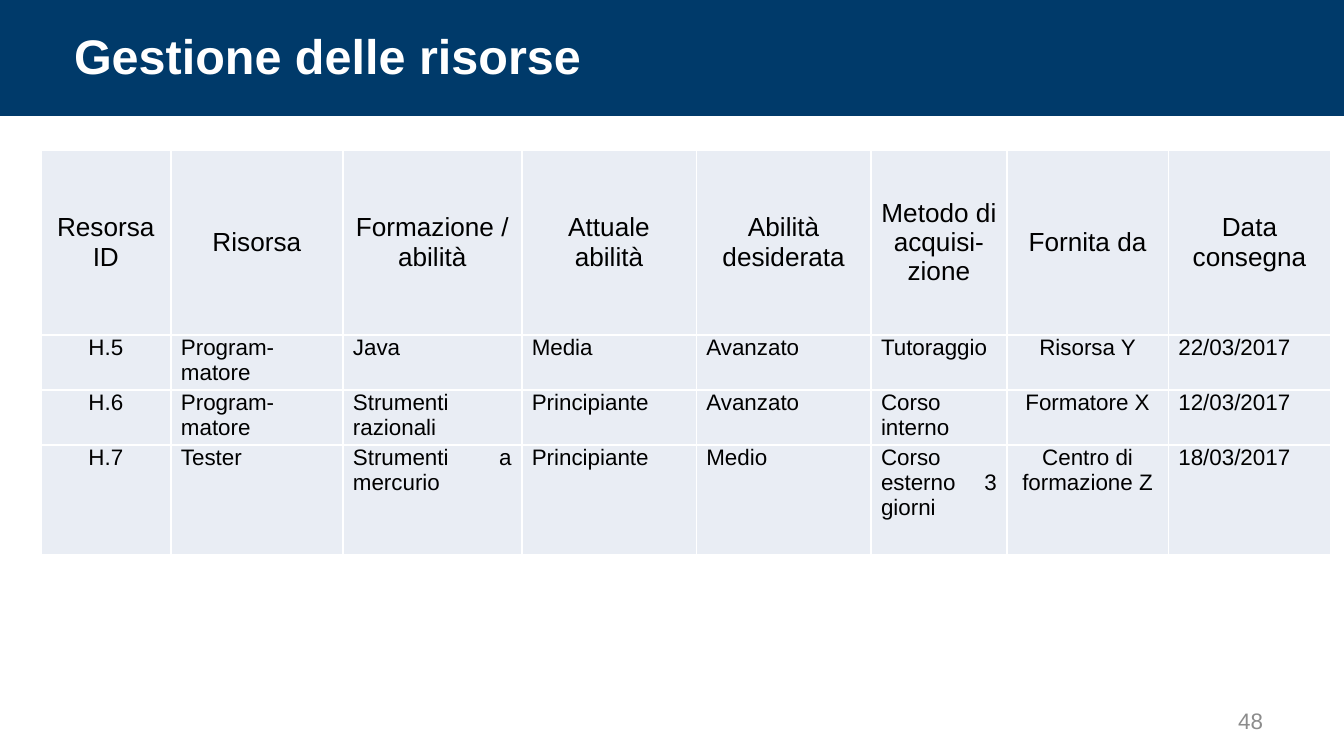
from typing import NamedTuple

from lxml import etree
from pptx import Presentation
from pptx.dml.color import RGBColor
from pptx.enum import shapes, text
from pptx.oxml import ns
from pptx.util import Cm, Pt

NAVY = RGBColor(0x00, 0x3A, 0x6A)
WHITE = RGBColor(0xFF, 0xFF, 0xFF)
BLACK = RGBColor(0x00, 0x00, 0x00)
GREY = RGBColor(0x8C, 0x8C, 0x8C)
PALE_BLUE = RGBColor(0xE9, 0xED, 0xF4)

LEFT, CENTER = text.PP_ALIGN.LEFT, text.PP_ALIGN.CENTER
RIGHT, JUSTIFY = text.PP_ALIGN.RIGHT, text.PP_ALIGN.JUSTIFY
TOP, MIDDLE = text.MSO_ANCHOR.TOP, text.MSO_ANCHOR.MIDDLE


class Column(NamedTuple):
    heading: str
    width: float
    align: text.PP_ALIGN
    entries: tuple[str, str, str]


COLUMNS = (
    Column("Resorsa ID", 2.46, CENTER, ("H.5", "H.6", "H.7")),
    Column("Risorsa", 3.25, JUSTIFY, ("Program-matore", "Program-matore", "Tester")),
    Column("Formazione /abilità", 3.38, JUSTIFY,
           ("Java", "Strumenti razionali", "Strumenti a mercurio")),
    Column("Attuale abilità", 3.3, JUSTIFY, ("Media", "Principiante", "Principiante")),
    Column("Abilità desiderata", 3.3, JUSTIFY, ("Avanzato", "Avanzato", "Medio")),
    Column("Metodo di acquisi-zione", 2.57, JUSTIFY,
           ("Tutoraggio", "Corso interno", "Corso esterno 3 giorni")),
    Column("Fornita da", 3.05, CENTER,
           ("Risorsa Y", "Formatore X", "Centro di formazione Z")),
    Column("Data consegna", 3.07, JUSTIFY, ("22/03/2017", "12/03/2017", "18/03/2017")),
)
ROW_HEIGHTS = (3.5, 1.04, 1.04, 2.08)


def write(frame, words: str, *, size: float, color: RGBColor = BLACK,
          bold: bool = False, align=LEFT, after: float = 0) -> None:
    """Fill a text frame with one formatted paragraph."""
    frame.word_wrap = True
    paragraph = frame.paragraphs[0]
    paragraph.alignment = align
    paragraph.space_after = Pt(after)
    run = paragraph.add_run()
    run.text = words
    run.font.name = "Arial"
    run.font.size = Pt(size)
    run.font.bold = bold
    run.font.color.rgb = color


def add_label(slide, left: float, top: float, width: float, height: float,
              words: str, **style) -> None:
    box = slide.shapes.add_textbox(Cm(left), Cm(top), Cm(width), Cm(height))
    frame = box.text_frame
    frame.margin_top = frame.margin_bottom = 0
    frame.vertical_anchor = MIDDLE
    write(frame, words, **style)


def add_borders(cell, color: RGBColor) -> None:
    """Draw a one-point line on each side of a cell."""
    properties = cell._tc.get_or_add_tcPr()
    for position, side in enumerate(("lnL", "lnR", "lnT", "lnB")):
        line = etree.Element(ns.qn(f"a:{side}"), w=str(Pt(1)))
        fill = etree.SubElement(line, ns.qn("a:solidFill"))
        etree.SubElement(fill, ns.qn("a:srgbClr"), val=str(color))
        properties.insert(position, line)


def fill_cell(cell, words: str, *, anchor=TOP, **style) -> None:
    cell.margin_left = cell.margin_right = Cm(0.19)
    cell.margin_top = cell.margin_bottom = 0
    cell.vertical_anchor = anchor
    cell.fill.solid()
    cell.fill.fore_color.rgb = PALE_BLUE
    add_borders(cell, WHITE)
    write(cell.text_frame, words, after=6, **style)


def add_resources(slide, columns: tuple[Column, ...]) -> None:
    total_width = sum(column.width for column in columns)
    frame = slide.shapes.add_table(len(ROW_HEIGHTS), len(columns), Cm(0.77), Cm(2.83),
                                   Cm(total_width), Cm(sum(ROW_HEIGHTS)))
    resources = frame.table
    for row, height in zip(resources.rows, ROW_HEIGHTS):
        row.height = Cm(height)
    for index, column in enumerate(columns):
        resources.columns[index].width = Cm(column.width)
        fill_cell(resources.cell(0, index), column.heading,
                  anchor=MIDDLE, size=14, align=CENTER)
        for row_index, entry in enumerate(column.entries, start=1):
            fill_cell(resources.cell(row_index, index), entry,
                      size=12, align=column.align)


def main() -> None:
    deck = Presentation()
    deck.slide_width, deck.slide_height = Cm(25.4), Cm(14.29)
    slide = deck.slides.add_slide(deck.slide_layouts[6])

    # Title band
    band = slide.shapes.add_shape(shapes.MSO_SHAPE.RECTANGLE, 0, 0,
                                  deck.slide_width, Cm(2.19))
    band.shadow.inherit = False
    band.fill.solid()
    band.fill.fore_color.rgb = NAVY
    band.line.fill.background()
    add_label(slide, 1.15, 0.49, 22.86, 1.12, "Gestione delle risorse",
              size=26, color=WHITE, bold=True)

    # Resource table
    add_resources(slide, COLUMNS)

    # Slide number
    add_label(slide, 22.6, 13.24, 1.52, 0.76, "48", size=12, color=GREY, align=RIGHT)

    deck.save("out.pptx")


if __name__ == "__main__":
    main()
